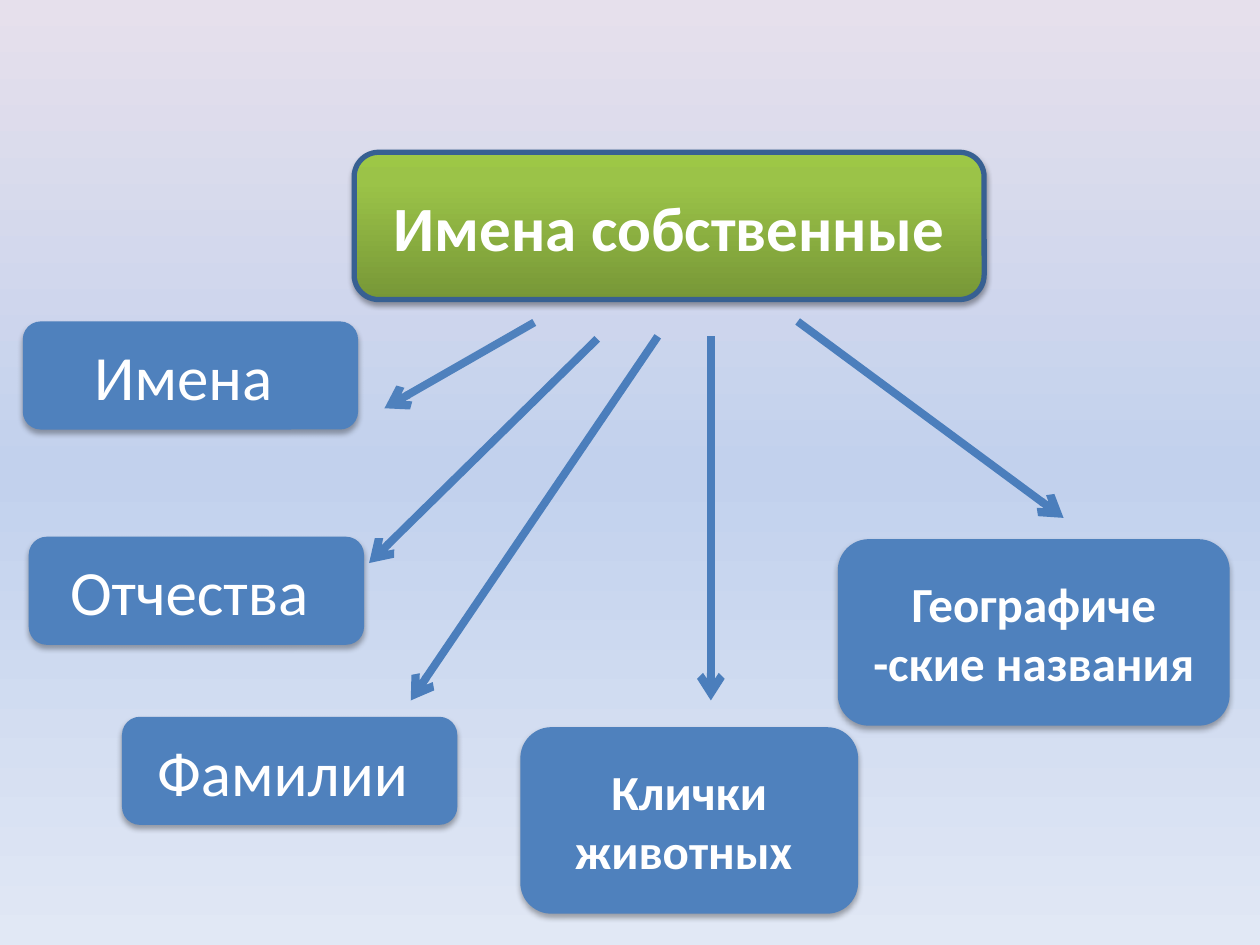
from lxml.etree import SubElement
from pptx import Presentation
from pptx.dml.color import RGBColor
from pptx.enum.shapes import MSO_CONNECTOR, MSO_SHAPE
from pptx.enum.text import MSO_ANCHOR, PP_ALIGN
from pptx.oxml.ns import qn
from pptx.util import Cm, Pt

BLUE, EDGE, WHITE = "4F81BD", "376092", "FFFFFF"


def color(code):
    return RGBColor.from_string(code)


def add(parent, tag, **attrs):
    return SubElement(parent, qn(tag), {k: str(v) for k, v in attrs.items()})


def blend(owner, fill, stops, angle):
    """Fill with a linear gradient; angle is in degrees, clockwise."""
    fill.gradient()
    grad = next(owner.iter(qn("a:gradFill")))
    for child in list(grad):
        grad.remove(child)
    group = add(grad, "a:gsLst")
    for pos, code in stops:
        stop = add(group, "a:gs", pos=pos * 1000)
        add(stop, "a:srgbClr", val=code)
    add(grad, "a:lin", ang=angle * 60000, scaled=0)


def shade(shape, alpha, blur, dist):
    """Give the shape a soft shadow straight below it."""
    shape.shadow.inherit = False
    effects = shape._element.spPr.find(qn("a:effectLst"))
    outer = add(effects, "a:outerShdw", blurRad=Pt(blur), dist=Pt(dist),
                dir=90 * 60000, algn="ctr", rotWithShape=0)
    tint = add(outer, "a:srgbClr", val="000000")
    add(tint, "a:alpha", val=alpha * 1000)


def card(slide, box, text, size, bold):
    """Rounded box with centred white text."""
    shape = slide.shapes.add_shape(MSO_SHAPE.ROUNDED_RECTANGLE,
                                   *[Cm(v) for v in box])
    frame = shape.text_frame
    frame.word_wrap = True
    frame.vertical_anchor = MSO_ANCHOR.MIDDLE
    frame.text = text
    para = frame.paragraphs[0]
    para.alignment = PP_ALIGN.CENTER
    font = para.runs[0].font
    font.name, font.size, font.bold = "Calibri", Pt(size), bold
    font.color.rgb = color(WHITE)
    return shape


def topic(slide, box, text):
    """Green heading box."""
    shape = card(slide, box, text, 36, True)
    blend(shape._element, shape.fill,
          [(0, "779737"), (80, "9BC348"), (100, "9DC746")], 270)
    shape.line.color.rgb = color(EDGE)
    shape.line.width = Pt(3)
    shade(shape, 35, 3.1, 1.8)


def branch(slide, box, text, size, bold):
    """Blue box for one kind of name."""
    shape = card(slide, box, text, size, bold)
    shape.fill.solid()
    shape.fill.fore_color.rgb = color(BLUE)
    shape.line.fill.background()
    shade(shape, 32, 3.5, 2.2)


def arrow(slide, start, end, code):
    link = slide.shapes.add_connector(
        MSO_CONNECTOR.STRAIGHT, *[Cm(v) for v in start + end])
    link.line.color.rgb = color(code)
    link.line.width = Pt(4.5)
    add(link.line._get_or_add_ln(), "a:tailEnd", type="arrow")
    add(link._element.spPr, "a:effectLst")


def main():
    deck = Presentation()
    deck.slide_width, deck.slide_height = Cm(25.4), Cm(19.05)
    slide = deck.slides.add_slide(deck.slide_layouts[6])

    # Background
    blend(slide._element, slide.background.fill,
          [(0, "E6E0EC"), (50, "C2D1ED"), (100, "E1E8F5")], 90)

    # Heading
    topic(slide, (7.14, 3.07, 12.7, 2.97), "Имена собственные")

    # Names of people
    for left, top, text in [(0.46, 6.48, "Имена "),
                            (0.58, 10.82, "Отчества "),
                            (2.46, 14.45, "Фамилии ")]:
        branch(slide, (left, top, 6.76, 2.18), text, 36, False)

    # Names of animals and places
    for left, top, width, text in [
            (10.49, 14.66, 6.81, "Клички животных "),
            (16.89, 10.87, 7.9, "Географиче -ские названия")]:
        branch(slide, (left, top, width, 3.76), text, 28, True)

    # Arrows from the heading to each kind
    deep = "4B7EBC"
    for start, end, code in [((10.77, 6.5), (7.75, 8.23), BLUE),
                             ((12.04, 6.83), (7.44, 11.35), deep),
                             ((13.26, 6.78), (8.28, 14.12), deep),
                             ((14.33, 6.78), (14.33, 14.12), deep),
                             ((16.08, 6.48), (21.44, 10.44), deep)]:
        arrow(slide, start, end, code)

    deck.save("out.pptx")


if __name__ == "__main__":
    main()
